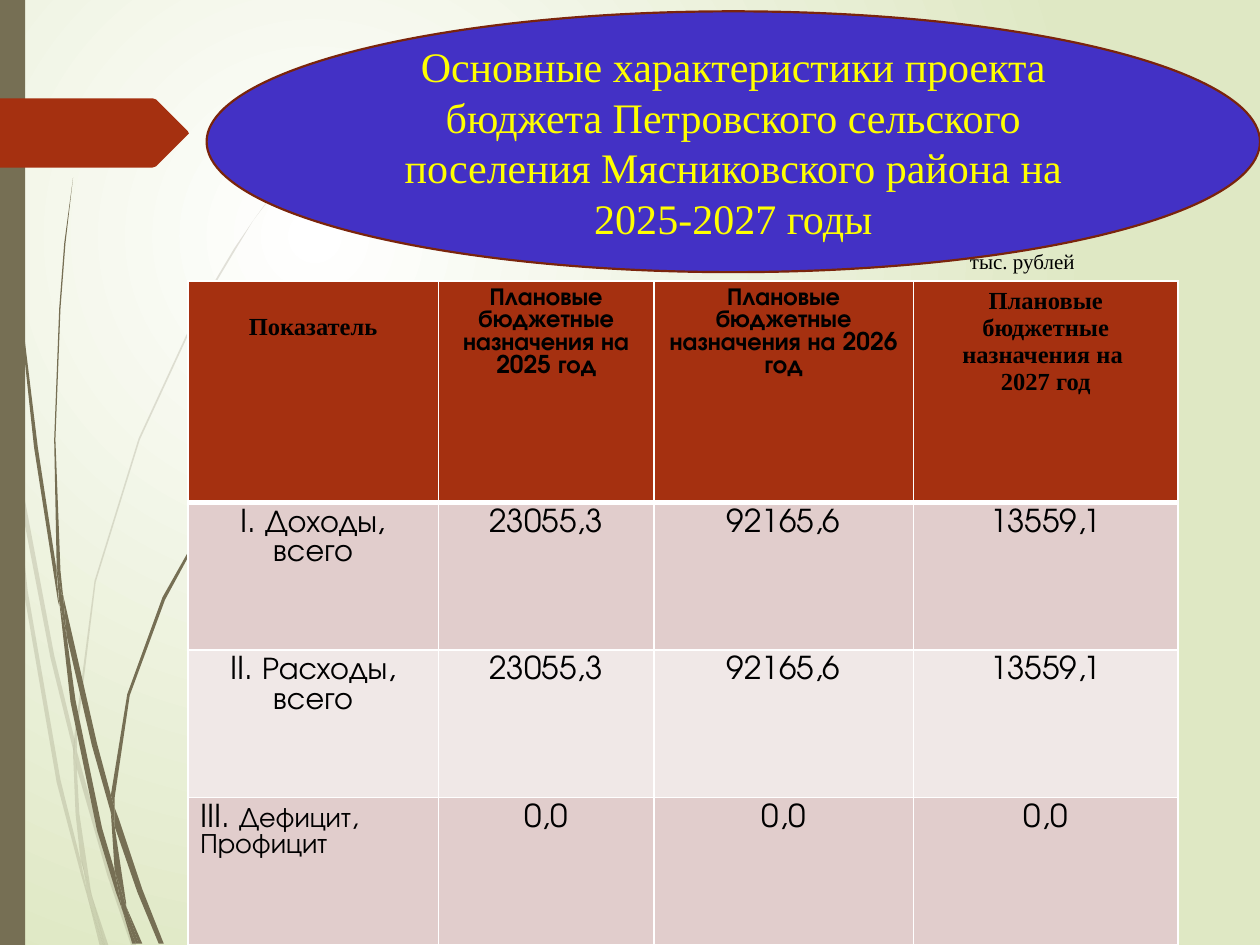
from lxml import etree
from pptx import Presentation
from pptx.dml.color import RGBColor
from pptx.enum.shapes import MSO_SHAPE
from pptx.enum.text import MSO_ANCHOR, PP_ALIGN
from pptx.oxml.ns import qn
from pptx.util import Inches, Pt

ELLIPSE, RECTANGLE = MSO_SHAPE.OVAL, MSO_SHAPE.RECTANGLE
LEFT, CENTER = PP_ALIGN.LEFT, PP_ALIGN.CENTER
TOP, MIDDLE = MSO_ANCHOR.TOP, MSO_ANCHOR.MIDDLE

WHITE = RGBColor(0xFF, 0xFF, 0xFF)
BLACK = RGBColor(0, 0, 0)
PALE_GREEN = RGBColor(0xDF, 0xE8, 0xC4)
OLIVE = RGBColor(0x76, 0x6F, 0x54)
RUST = RGBColor(0xA5, 0x30, 0x10)
DARK_RUST = RGBColor(0x7A, 0x24, 0x0C)
BLUE = RGBColor(0x43, 0x31, 0xC5)
YELLOW = RGBColor(0xFF, 0xFF, 0)
ROSE = RGBColor(0xE1, 0xCD, 0xCC)
LIGHT_ROSE = RGBColor(0xF0, 0xE8, 0xE7)

SERIF, SANS = "Times New Roman", "TeX Gyre Adventor"
COLUMNS, ROWS = 1000, 750  # fine grid over the slide
UNIT = Inches(10) // COLUMNS

# Grass blades: outline points on the grid
FAINT_BLADES = [
    [(8, 350), (6, 322), (0, 282), (0, 299), (7, 344)],
    [(40, 522), (59, 599), (59, 586), (43, 520), (10, 345), (12, 376)],
    [(64, 607), (61, 596), (61, 610), (85, 694), (104, 750), (108, 750), (88, 692)],
    [(83, 750), (86, 750), (73, 711)],
    [(64, 683), (48, 619), (22, 469), (12, 376), (8, 350), (19, 470), (45, 621),
     (64, 693), (70, 714), (69, 707)],
    [(58, 599), (60, 646), (64, 683), (67, 692), (73, 711), (72, 706), (63, 646),
     (61, 610), (61, 608)],
    [(61, 584), (76, 462), (111, 349), (159, 245), (187, 198), (201, 175), (217, 154),
     (217, 153), (201, 175), (186, 197), (158, 244), (110, 348), (75, 461), (59, 584),
     (59, 586), (61, 596)],
    [(70, 714), (79, 750), (82, 750)],
    [(61, 608), (61, 610), (61, 596), (59, 586), (58, 599)],
    [(67, 692), (65, 683), (69, 707), (70, 714), (82, 750), (83, 750), (73, 711)],
]
DARK_BLADES = [
    [(5, 110), (14, 233), (27, 355), (46, 477), (47, 481), (45, 457), (45, 453),
     (30, 355), (15, 232), (6, 109), (4, 48), (3, 0), (2, 0), (3, 48)],
    [(73, 592), (88, 645), (88, 633), (88, 631), (77, 590), (50, 472), (53, 505)],
    [(94, 649), (91, 641), (91, 656), (109, 708), (126, 749), (130, 749), (113, 706)],
    [(91, 691), (81, 657), (60, 556), (53, 505), (47, 477), (56, 557), (77, 659),
     (92, 708), (97, 722), (96, 717)],
    [(50, 472), (48, 453), (44, 349), (48, 245), (52, 193), (58, 141), (51, 193),
     (47, 245), (43, 349), (45, 449), (49, 472)],
    [(110, 749), (113, 749), (100, 719)],
    [(47, 477), (53, 505), (50, 472), (49, 472), (45, 449), (45, 453)],
    [(91, 633), (103, 552), (131, 476), (169, 406), (191, 374), (203, 359), (216, 344),
     (215, 344), (203, 358), (191, 373), (168, 405), (129, 474), (101, 551), (88, 631),
     (91, 641)],
    [(97, 722), (105, 749), (108, 749)],
    [(88, 645), (91, 691), (96, 706), (100, 719), (100, 716), (91, 656), (90, 651)],
    [(88, 645), (90, 651), (91, 656), (91, 641), (88, 631), (88, 633)],
    [(96, 706), (91, 691), (96, 717), (97, 722), (108, 749), (110, 749), (100, 719)],
]
ARROW = [(149, 107), (124, 132), (121, 133), (0, 133), (0, 78), (121, 78), (124, 79),
         (149, 104), (150, 105.5)]

COLUMN_WIDTHS = [199, 171, 206, 210]
ROW_HEIGHTS = [176, 117, 117, 117]
HEADINGS = [
    (["Показатель"], SERIF),
    (["Плановые бюджетные назначения на 2025 год"], SANS),
    (["Плановые бюджетные назначения на 2026 год"], SANS),
    (["Плановые бюджетные назначения на ", "2027 год"], SERIF),
]
AMOUNTS = ["23055,3", "92165,6", "13559,1"]
BODY = [
    (["I. Доходы,", "всего"], CENTER, AMOUNTS, ROSE),
    (["II. Расходы, всего"], CENTER, AMOUNTS, LIGHT_ROSE),
    ([[("III. ", 18), ("Дефицит,", 16)], [("Профицит", 16)]], LEFT, ["0,0"] * 3, ROSE),
]


def write_text(frame, paragraphs, size=18, font=SANS, color=BLACK, bold=False, align=CENTER):
    """Fill a frame; a paragraph is a string or a list of (text, size) runs."""
    for index, content in enumerate(paragraphs):
        paragraph = frame.paragraphs[0] if index == 0 else frame.add_paragraph()
        paragraph.alignment = align
        runs = [(content, size)] if isinstance(content, str) else content
        for text, run_size in runs:
            run = paragraph.add_run()
            run.text = text
            run.font.size, run.font.name = Pt(run_size), font
            run.font.bold, run.font.color.rgb = bold, color


class SlideBuilder:
    def __init__(self, presentation):
        self.slide = presentation.slides.add_slide(presentation.slide_layouts[6])
        self.shapes = self.slide.shapes

    def background(self, inner, outer):
        fill = self.slide.background.fill
        fill.gradient()
        for stop, color in zip(fill.gradient_stops, (inner, outer)):
            stop.color.rgb = color
        linear = self.slide.element.find(".//" + qn("a:lin"))
        radial = etree.Element(qn("a:path"), path="circle")
        etree.SubElement(radial, qn("a:fillToRect"), l="50000", t="50000", r="100000", b="100000")
        linear.getparent().replace(linear, radial)

    def paint(self, shape, color, line=None, opacity=None):
        shape.shadow.inherit = False
        shape.fill.solid()
        shape.fill.fore_color.rgb = color
        if opacity is not None:
            rgb = shape.fill._xPr.find(".//" + qn("a:srgbClr"))
            etree.SubElement(rgb, qn("a:alpha"), val=str(opacity * 1000))
        if line is None:
            shape.line.fill.background()
        else:
            shape.line.color.rgb, shape.line.width = line, Pt(1.25)

    def outline(self, points, color, opacity=None):
        builder = self.shapes.build_freeform(*points[0], scale=UNIT)
        builder.add_line_segments(points[1:], close=True)
        self.paint(builder.convert_to_shape(), color, opacity=opacity)

    def preset(self, kind, box, color, line=None):
        shape = self.shapes.add_shape(kind, *(UNIT * length for length in box))
        self.paint(shape, color, line)
        return shape

    def label(self, box, text, **text_format):
        frame = self.shapes.add_textbox(*(UNIT * length for length in box)).text_frame
        frame.word_wrap = False
        write_text(frame, [text], **text_format)

    def table(self, left, top, widths, heights):
        box = (left, top, sum(widths), sum(heights))
        table = self.shapes.add_table(
            len(heights), len(widths), *(UNIT * length for length in box)).table
        for column, width in zip(table.columns, widths):
            column.width = UNIT * width
        for row, height in zip(table.rows, heights):
            row.height = UNIT * height
        return table

    def cell(self, cell, paragraphs, color, top=1, bottom=1, **text_format):
        properties = cell._tc.get_or_add_tcPr()
        for side, width in (("L", 1), ("R", 1), ("T", top), ("B", bottom)):
            border = etree.SubElement(properties, qn("a:ln" + side), w=str(Pt(width)))
            fill = etree.SubElement(border, qn("a:solidFill"))
            etree.SubElement(fill, qn("a:srgbClr"), val=str(WHITE))
        cell.fill.solid()
        cell.fill.fore_color.rgb = color
        cell.vertical_anchor = TOP
        write_text(cell.text_frame, paragraphs, **text_format)


def main():
    presentation = Presentation()
    presentation.slide_width, presentation.slide_height = UNIT * COLUMNS, UNIT * ROWS
    builder = SlideBuilder(presentation)

    # Backdrop: grass, side bar and arrow
    builder.background(WHITE, PALE_GREEN)
    for blades, opacity in ((FAINT_BLADES, 20), (DARK_BLADES, None)):
        for blade in blades:
            builder.outline(blade, OLIVE, opacity)
    builder.preset(RECTANGLE, (0, 0, 20, ROWS), OLIVE)
    builder.outline(ARROW, RUST)

    # Budget table
    table = builder.table(149, 223, COLUMN_WIDTHS, ROW_HEIGHTS)
    for column, (paragraphs, font) in enumerate(HEADINGS):
        builder.cell(table.cell(0, column), paragraphs, RUST, bottom=3,
                     size=14, font=font, bold=True)
    table.cell(0, 0).margin_top = UNIT * 26
    for row, (name, align, amounts, color) in enumerate(BODY, start=1):
        top = 3 if row == 1 else 1
        builder.cell(table.cell(row, 0), name, color, top, align=align)
        for column, amount in enumerate(amounts, start=1):
            builder.cell(table.cell(row, column), [amount], color, top)

    # Title and unit of measure
    title = builder.preset(ELLIPSE, (164, 9, 836, 207), BLUE, DARK_RUST).text_frame
    title.word_wrap, title.vertical_anchor = True, MIDDLE
    write_text(title, ["Основные характеристики проекта бюджета Петровского сельского "
                       "поселения Мясниковского района на 2025-2027 годы"],
               size=24, font=SERIF, color=YELLOW)
    builder.label((760, 192, 104, 30), "тыс. рублей", size=12, font=SERIF, align=LEFT)

    presentation.save("out.pptx")


if __name__ == "__main__":
    main()
